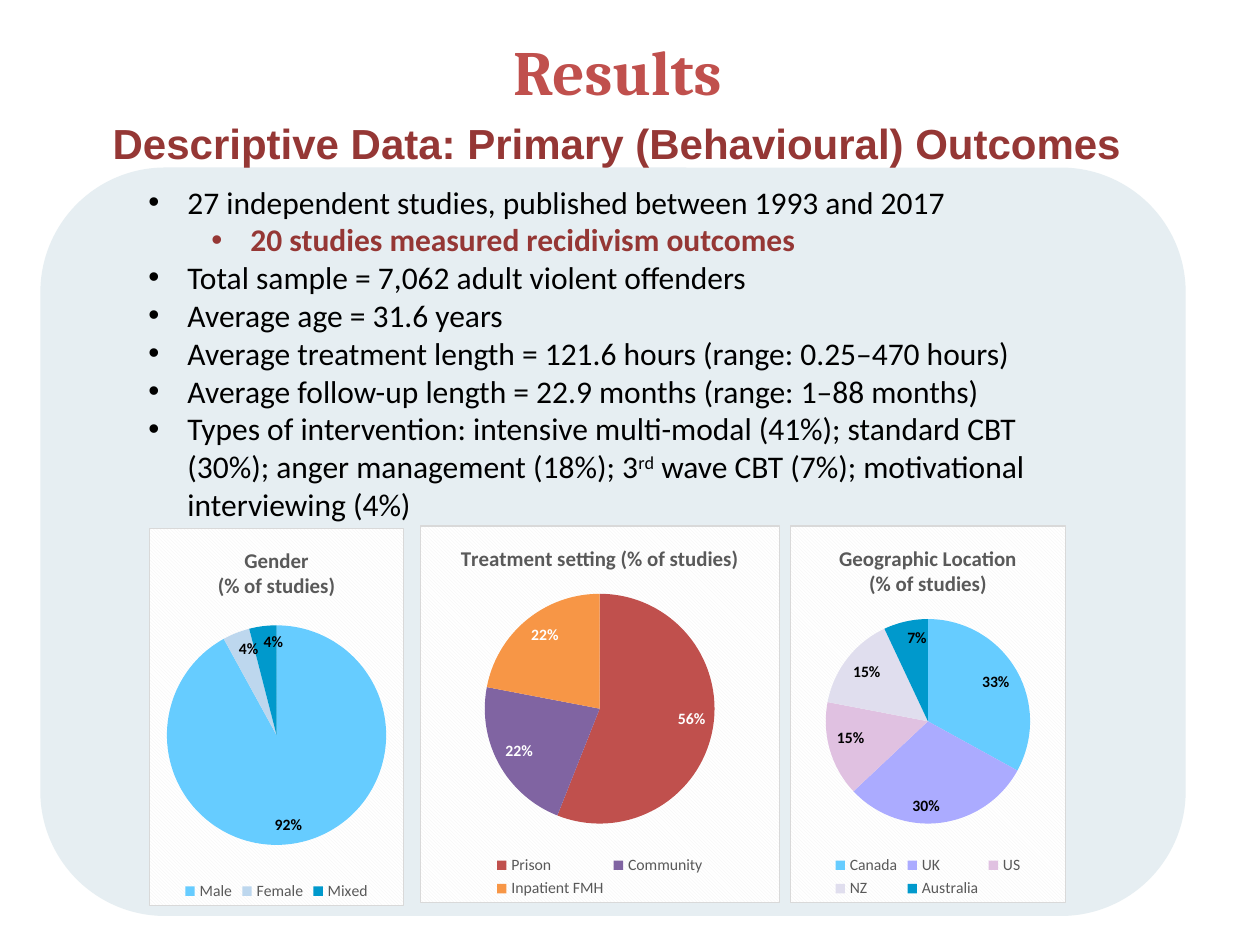
"""Build the Results slide with study facts and three pie charts."""
from lxml import etree
from pptx import Presentation
from pptx.chart.data import CategoryChartData
from pptx.dml.color import RGBColor
from pptx.enum.chart import XL_CHART_TYPE, XL_LABEL_POSITION, XL_LEGEND_POSITION
from pptx.enum.shapes import MSO_SHAPE
from pptx.enum.text import MSO_ANCHOR, PP_ALIGN
from pptx.oxml import parse_xml
from pptx.oxml.ns import qn
from pptx.util import Inches, Pt

PIE = XL_CHART_TYPE.PIE
INSIDE = XL_LABEL_POSITION.INSIDE_END
BOTTOM = XL_LEGEND_POSITION.BOTTOM
ROUND = MSO_SHAPE.ROUNDED_RECTANGLE
CENTER = PP_ALIGN.CENTER
MIDDLE = MSO_ANCHOR.MIDDLE
NS = ('xmlns:a="http://schemas.openxmlformats.org/drawingml/2006/main" '
      'xmlns:c="http://schemas.openxmlformats.org/drawingml/2006/chart"')
HEX = {"panel": "E6EEF2", "red": "C0504D", "dark": "953735", "black": "000000",
       "white": "FFFFFF", "gray": "595959", "edge": "D9D9D9", "hatch": "F2F2F2",
       "sky": "66CCFF", "pale": "BDD7EE", "teal": "0099CC", "lilac": "ABABFF",
       "pink": "E0C1E1", "mist": "E0DEEE", "plum": "8064A2", "orange": "F79646"}


def style(font, color, **values):
    for key, value in values.items():
        setattr(font, key, value)
    font.color.rgb = RGBColor.from_string(HEX[color])


def add_text(para, text, color, **values):
    run = para.add_run()
    run.text = text
    style(run.font, color, **values)
    return run


deck = Presentation()
deck.slide_width, deck.slide_height = Inches(10), Inches(7.5)
slide = deck.slides.add_slide(deck.slide_layouts[5])
shapes = slide.shapes

panel = shapes.add_shape(ROUND, Inches(0.32), Inches(1.33), Inches(9.09), Inches(5.94))
panel.shadow.inherit = False
panel.fill.solid()
panel.fill.fore_color.rgb = RGBColor.from_string(HEX["panel"])
panel.line.fill.background()

title = shapes.title
title.left, title.top, title.width, title.height = (
    Inches(0.4), Inches(0.25), Inches(9), Inches(0.62))
title.text_frame.vertical_anchor = MIDDLE
para = title.text_frame.paragraphs[0]
para.alignment = CENTER
run = add_text(para, "Results", "red", name="Cambria", size=Pt(36), bold=True)
run.font._element.insert(0, parse_xml(
    f'<a:ln {NS} w="18000"><a:solidFill><a:srgbClr val="{HEX["dark"]}"/></a:solidFill></a:ln>'))

head = shapes.add_textbox(Inches(0.17), Inches(0.84), Inches(9.45), Inches(5.51)).text_frame
head.word_wrap = True
para = head.paragraphs[0]
para.alignment = CENTER
para.line_spacing = 1.1
para.space_after = Pt(6)
add_text(para, "Descriptive Data: Primary (Behavioural) Outcomes", "dark",
         name="Arial", size=Pt(24), bold=True)

FACTS = [
    (0, ["27 independent studies, published between 1993 and 2017"]),
    (1, ["20 studies measured recidivism outcomes"]),
    (0, ["Total sample = 7,062 adult violent offenders"]),
    (0, ["Average age = 31.6 years"]),
    (0, ["Average treatment length = 121.6 hours (range: 0.25–470 hours)"]),
    (0, ["Average follow-up length = 22.9 months (range: 1–88 months)"]),
    (0, ["Types of intervention: intensive multi-modal (41%); standard CBT (30%); "
         "anger management (18%); 3", "rd",
         " wave CBT (7%); motivational interviewing (4%)"]),
]
body = shapes.add_textbox(Inches(1.08), Inches(1.4), Inches(7.64), Inches(2.83)).text_frame
body.word_wrap = True
for row, (level, parts) in enumerate(FACTS):
    para = body.add_paragraph() if row else body.paragraphs[0]
    para.level = level
    props = para._p.get_or_add_pPr()
    props.set("marL", str(Inches(0.31 + 0.5 * level)))
    props.set("indent", str(Inches(-0.31)))
    etree.SubElement(props, qn("a:buFont")).set("typeface", "Arial")
    etree.SubElement(props, qn("a:buChar")).set("char", "•")
    for part in parts:
        run = add_text(para, part, "dark" if level else "black",
                       name="Calibri", size=Pt(18), bold=bool(level))
        if part == "rd":
            run.font._element.set("baseline", "30000")

PIES = [
    (1.18, 4.19, 2.03, 4.96, 1.75, ["Gender", "(% of studies)"], "black",
     [("Male", 92, "sky"), ("Female", 4, "pale"), ("Mixed", 4, "teal")]),
    (6.27, 4.17, 2.19, 4.91, 1.63, ["Geographic Location", "(% of studies)"], "black",
     [("Canada", 33, "sky"), ("UK", 30, "lilac"), ("US", 15, "pink"),
      ("NZ", 15, "mist"), ("Australia", 7, "teal")]),
    (3.33, 4.17, 2.86, 4.71, 1.83, ["Treatment setting (% of studies)"], "white",
     [("Prison", 56, "red"), ("Community", 22, "plum"), ("Inpatient FMH", 22, "orange")]),
]
TALL = 3
for left, top, wide, disc, size, lines, ink, rows in PIES:
    data = CategoryChartData()
    data.categories = [name for name, value, color in rows]
    data.add_series("Series 1", [value for name, value, color in rows])
    chart = shapes.add_chart(PIE, Inches(left), Inches(top), Inches(wide),
                             Inches(TALL), data).chart
    style(chart.font, "black", name="Calibri", size=Pt(10))
    chart.has_title = True
    frame = chart.chart_title.text_frame
    for row, line in enumerate(lines):
        para = frame.add_paragraph() if row else frame.paragraphs[0]
        add_text(para, line, "gray", name="Calibri", size=Pt(12), bold=True)
    chart.chart_title.include_in_layout = False
    chart.has_legend = True
    chart.legend.position = BOTTOM
    chart.legend.include_in_layout = False
    style(chart.legend.font, "gray", name="Calibri", size=Pt(9))

    plot = chart.plots[0]
    plot.vary_by_categories = True
    for row, (name, value, color) in enumerate(rows):
        fill = plot.series[0].points[row].format.fill
        fill.solid()
        fill.fore_color.rgb = RGBColor.from_string(HEX[color])
    plot.has_data_labels = True
    labels = plot.data_labels
    marks = {"show_percentage": True, "show_value": False, "number_format": "0%",
             "number_format_is_linked": False, "position": INSIDE}
    for key, mark in marks.items():
        setattr(labels, key, mark)
    style(labels.font, ink, name="Calibri", size=Pt(9), bold=True)

    root = chart.element.find(qn("c:chart"))
    area = root.find(qn("c:plotArea"))
    old = area.find(qn("c:layout"))
    if old is not None:
        area.remove(old)
    place = {"x": (1 - size / wide) / 2, "y": (disc - top) / TALL,
             "w": size / wide, "h": size / TALL}
    spots = "".join(f'<c:{key} val="{value:.3f}"/>' for key, value in place.items())
    area.insert(0, parse_xml(
        f'<c:layout {NS}><c:manualLayout><c:layoutTarget val="inner"/>'
        f'<c:xMode val="edge"/><c:yMode val="edge"/>{spots}</c:manualLayout></c:layout>'))
    root.addprevious(parse_xml(f'<c:roundedCorners {NS} val="0"/>'))
    root.addnext(parse_xml(
        f'<c:spPr {NS}><a:pattFill prst="dkDnDiag">'
        f'<a:fgClr><a:srgbClr val="{HEX["hatch"]}"/></a:fgClr>'
        f'<a:bgClr><a:srgbClr val="{HEX["white"]}"/></a:bgClr></a:pattFill>'
        f'<a:ln w="{Pt(0.75)}"><a:solidFill><a:srgbClr val="{HEX["edge"]}"/>'
        '</a:solidFill></a:ln></c:spPr>'))

deck.save("out.pptx")
